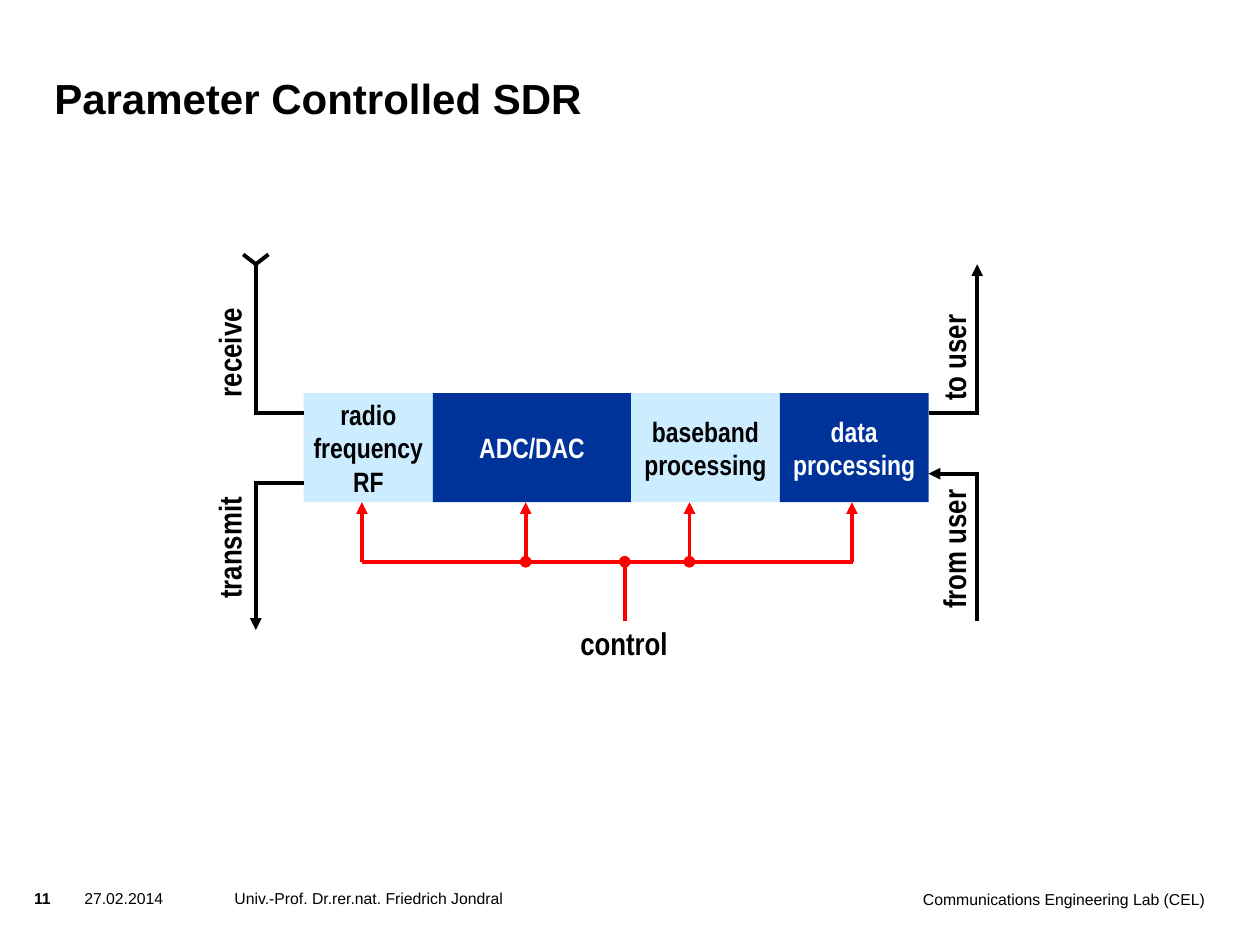
"""Build the slide on parameter controlled SDR."""
from lxml.etree import SubElement
from pptx import Presentation
from pptx.dml.color import RGBColor
from pptx.enum.shapes import MSO_CONNECTOR, MSO_SHAPE
from pptx.enum.text import MSO_ANCHOR, PP_ALIGN
from pptx.oxml.ns import qn
from pptx.util import Pt

BLACK = RGBColor(0, 0, 0)
WHITE = RGBColor(255, 255, 255)
RED = RGBColor(255, 0, 0)
PALE = RGBColor(0xCC, 0xEC, 0xFF)
NAVY = RGBColor(0, 0x33, 0x99)

deck = Presentation()
deck.slide_width, deck.slide_height = Pt(720), Pt(540)
slide = deck.slides.add_slide(deck.slide_layouts[6])
shapes = slide.shapes


def write(shape, lines, size, face, bold, color=BLACK, align=PP_ALIGN.LEFT,
          anchor=MSO_ANCHOR.TOP, pad=(0, 0), wrap=True):
    frame = shape.text_frame
    frame.word_wrap = wrap
    frame.vertical_anchor = anchor
    frame.margin_left = frame.margin_right = Pt(pad[0])
    frame.margin_top = frame.margin_bottom = Pt(pad[1])
    for i, line in enumerate(lines):
        para = frame.add_paragraph() if i else frame.paragraphs[0]
        para.alignment = align
        run = para.add_run()
        run.text = line
        run.font.size, run.font.name = Pt(size), face
        run.font.bold = bold
        run.font.color.rgb = color


def wire(start, end, color=BLACK, head=None, tail=None):
    line = shapes.add_connector(MSO_CONNECTOR.STRAIGHT,
                                *[Pt(v) for v in start + end])
    line.line.color.rgb = color
    line.line.width = Pt(2.25)
    ln = line.line._get_or_add_ln()
    for tag, kind in (("a:headEnd", head), ("a:tailEnd", tail)):
        if kind:
            SubElement(ln, qn(tag)).set("type", kind)
    SubElement(line._element.spPr, qn("a:effectLst"))


title = shapes.add_textbox(Pt(31), Pt(26), Pt(544), Pt(44))
write(title, ["Parameter Controlled SDR"], 24, "Arial", True,
      anchor=MSO_ANCHOR.BOTTOM)

for left, top, width, text, bold, align in (
    (19.5, 507.6, 26, "11", True, PP_ALIGN.LEFT),
    (48.2, 507.6, 68, "27.02.2014", False, PP_ALIGN.LEFT),
    (134, 507.6, 335, "Univ.-Prof. Dr.rer.nat. Friedrich Jondral", False,
     PP_ALIGN.LEFT),
    (473, 508.5, 215.5, "Communications Engineering Lab (CEL)", False,
     PP_ALIGN.RIGHT),
):
    foot = shapes.add_textbox(Pt(left), Pt(top), Pt(width), Pt(28))
    write(foot, [text], 9, "Arial", bold, align=align)

left, top, base = 173.6, 224.6, 287
for width, fill, ink, lines in (
    (73.8, PALE, BLACK, ["radio", "frequency", "RF"]),
    (113.2, NAVY, WHITE, ["ADC/DAC"]),
    (85, PALE, BLACK, ["baseband", "processing"]),
    (85, NAVY, WHITE, ["data", "processing"]),
):
    block = shapes.add_shape(MSO_SHAPE.RECTANGLE, Pt(left), Pt(top),
                             Pt(width), Pt(base - top))
    block.shadow.inherit = False
    block.fill.solid()
    block.fill.fore_color.rgb = fill
    block.line.fill.background()
    write(block, lines, 16, "Arial Narrow", True, ink, PP_ALIGN.CENTER,
          MSO_ANCHOR.MIDDLE, (0.7, 3.6))
    left += width

for mid, level, width, text, turn in (
    (131, 201, 66, "receive", 270),
    (131, 312.5, 73.5, "transmit", 270),
    (545, 204, 64, "to user", 270),
    (545, 313.2, 83.5, "from user", 270),
    (357, 367.2, 65, "control", 0),
):
    label = shapes.add_textbox(Pt(mid - width / 2), Pt(level - 14.4),
                               Pt(width), Pt(28.8))
    label.rotation = turn
    write(label, [text], 18, "Arial Narrow", True, pad=(7.2, 3.6), wrap=False)

mast, user, edge = 146.2, 558.4, 530.6
wire((edge, 236), (user + 1, 236))
wire((user, 236), (user, 151), tail="triangle")
wire((edge, 270.7), (user + 1, 270.7), head="triangle")
wire((user, 270), (user, 355))
wire((173.6, 276), (mast - 1, 276))
wire((mast, 275), (mast, 360), tail="triangle")
wire((mast - 1, 236), (173.6, 236))
wire((mast, 236), (mast, 151))
for side in (7.2, -7.2):
    wire((mast, 151), (mast + side, 145.4))

bus = 321
for x, dot in ((206.8, None), (300.4, "oval"), (394, "oval"), (486.8, None)):
    wire((x, base), (x, bus), RED, "triangle", dot)
wire((357, 355), (357, bus), RED, tail="oval")
wire((206.8, bus), (487.4, bus), RED)

deck.save("out.pptx")
